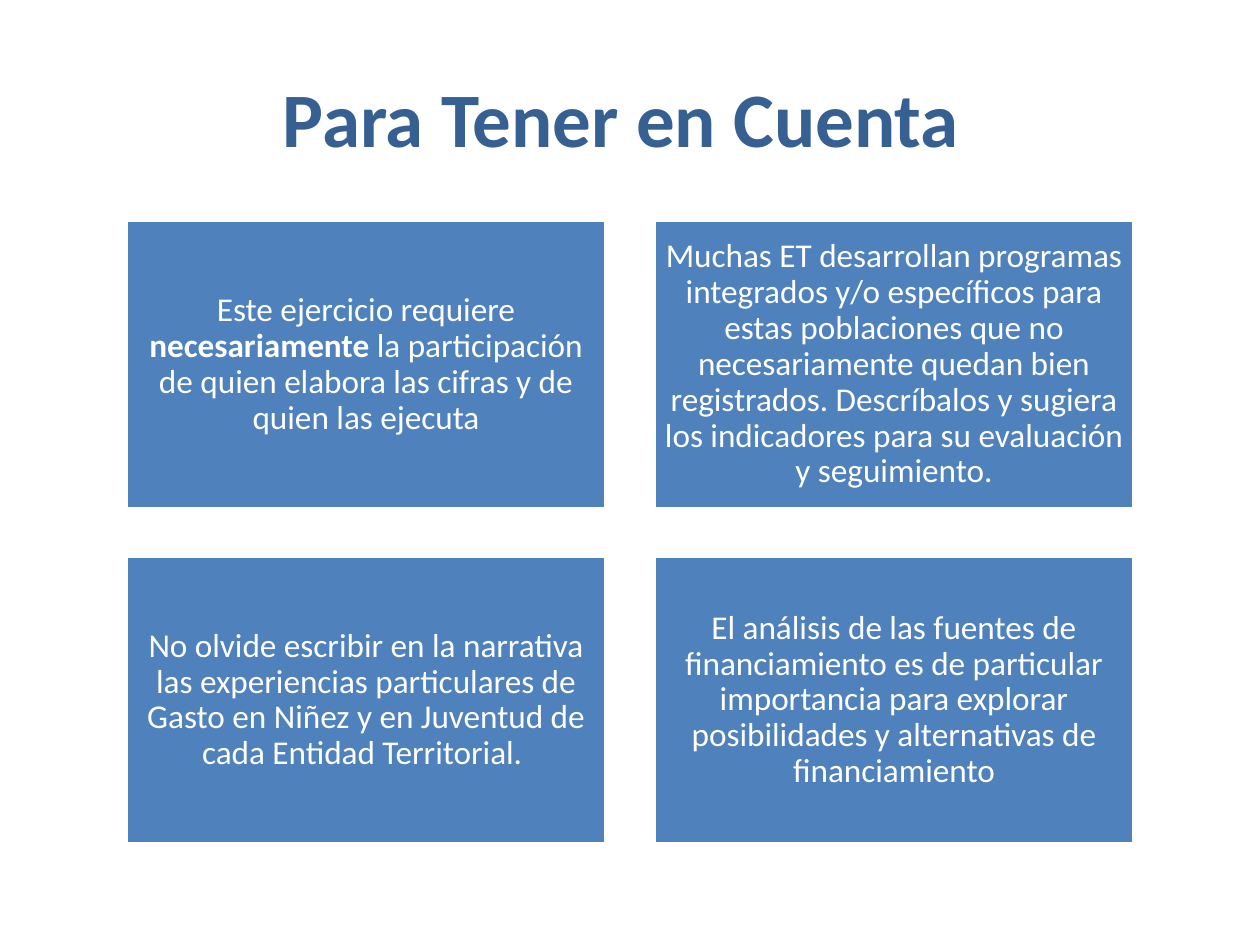
import pptx
import pptx.dml.color
import pptx.enum.shapes
import pptx.enum.text
import pptx.util
from dataclasses import dataclass

Inches = pptx.util.Inches
Pt = pptx.util.Pt


@dataclass(frozen=True)
class Theme:
    font: str = "Calibri"
    title_color: str = "376092"
    card_fill: str = "4F81BD"
    white: str = "FFFFFF"
    title_size: float = 44
    card_size: float = 19


THEME = Theme()

# Each card is a list of (text, bold) runs
CARDS = [
    [("Este ejercicio requiere ", False),
     ("necesariamente", True),
     (" la participación de quien elabora las cifras y de quien las ejecuta", False)],
    [("Muchas ET desarrollan programas integrados y/o específicos para estas "
      "poblaciones que no necesariamente quedan bien registrados. Descríbalos y "
      "sugiera los indicadores para su evaluación y seguimiento.", False)],
    [("No olvide escribir en la narrativa las experiencias particulares de Gasto "
      "en Niñez y en Juventud de cada Entidad Territorial. ", False)],
    [("El análisis de las fuentes de financiamiento es de particular importancia "
      "para explorar posibilidades y alternativas de financiamiento", False)],
]


def rgb(value):
    return pptx.dml.color.RGBColor.from_string(value)


def write_text(tf, runs, *, size, color, line_spacing=None, space_after=None):
    """Fill a text frame with one centred paragraph of (text, bold) runs."""
    tf.word_wrap = True
    tf.vertical_anchor = pptx.enum.text.MSO_ANCHOR.MIDDLE
    p = tf.paragraphs[0]
    p.alignment = pptx.enum.text.PP_ALIGN.CENTER
    if line_spacing is not None:
        p.line_spacing = line_spacing
    if space_after is not None:
        p.space_after = Pt(space_after)
    for text, bold in runs:
        r = p.add_run()
        r.text = text
        r.font.name = THEME.font
        r.font.size = Pt(size)
        r.font.bold = bold
        r.font.color.rgb = rgb(color)


def place_title(s, left, top, width, height):
    sp = s.shapes.title
    sp.left, sp.top, sp.width, sp.height = left, top, width, height
    write_text(sp.text_frame, [("Para Tener en Cuenta ", True)],
               size=THEME.title_size, color=THEME.title_color)


def add_card(s, runs, left, top, width, height):
    sp = s.shapes.add_shape(pptx.enum.shapes.MSO_SHAPE.RECTANGLE,
                            left, top, width, height)
    sp.shadow.inherit = False
    sp.fill.solid()
    sp.fill.fore_color.rgb = rgb(THEME.card_fill)
    sp.line.color.rgb = rgb(THEME.white)
    sp.line.width = Pt(2)
    tf = sp.text_frame
    tf.margin_left = tf.margin_right = Inches(0.08)
    tf.margin_top = tf.margin_bottom = Inches(0.08)
    write_text(tf, runs, size=THEME.card_size, color=THEME.white,
               line_spacing=0.9, space_after=0.35 * THEME.card_size)


def add_card_grid(s, left, top, width, height, gap, columns=2):
    rows = len(CARDS) // columns
    card_w = (width - gap * (columns - 1)) // columns
    card_h = (height - gap * (rows - 1)) // rows
    for i, runs in enumerate(CARDS):
        row, col = divmod(i, columns)
        add_card(s, runs, left + col * (card_w + gap),
                 top + row * (card_h + gap), card_w, card_h)


def main():
    prs = pptx.Presentation()
    prs.slide_width, prs.slide_height = Inches(10), Inches(7.5)
    s = prs.slides.add_slide(prs.slide_layouts[5])  # title only

    # Heading
    place_title(s, Inches(0.5), Inches(0.3), Inches(9), Inches(1.25))
    # Two by two grid of notes
    add_card_grid(s, Inches(1), Inches(1.75), Inches(8), Inches(4.95),
                  gap=Inches(0.38))

    prs.save("out.pptx")


if __name__ == "__main__":
    main()
